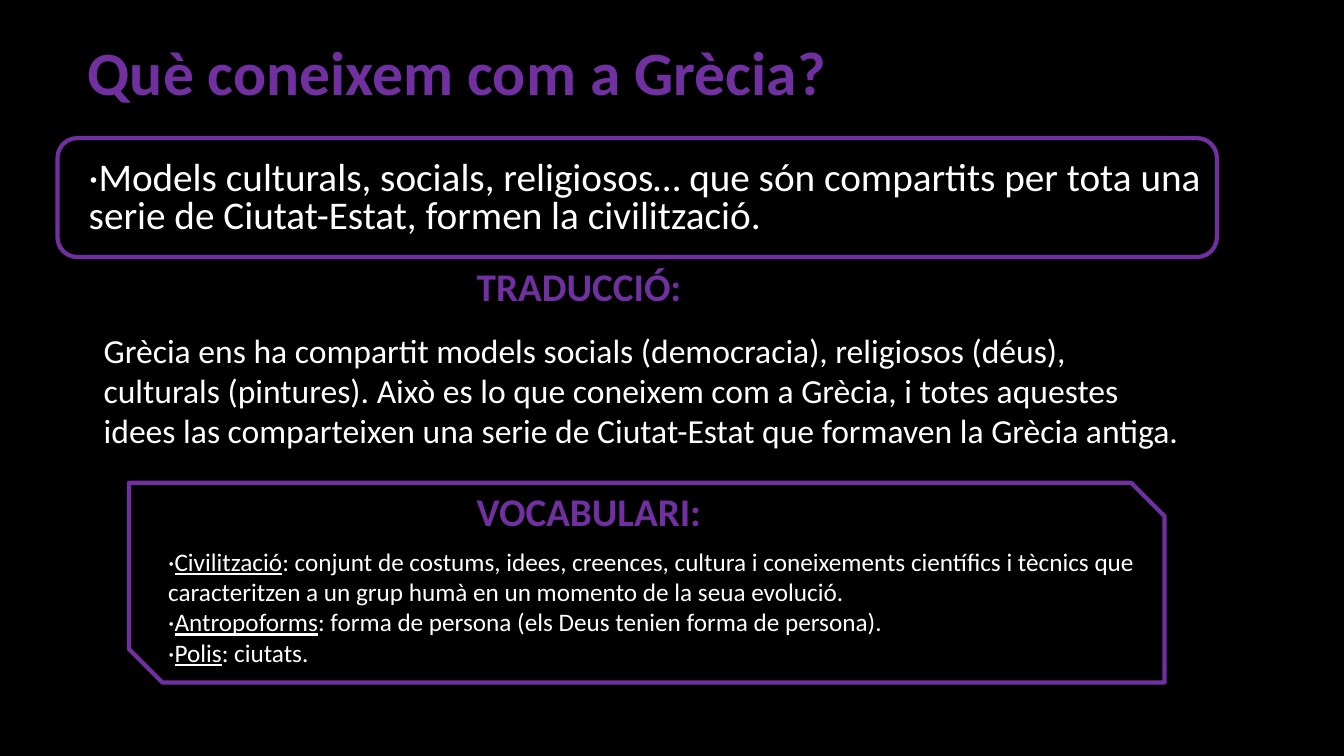
from dataclasses import dataclass

from lxml import etree
from pptx import Presentation
from pptx import util as u
from pptx.dml.color import RGBColor
from pptx.enum import shapes, text
from pptx.oxml import ns
from pptx.shapes.base import BaseShape
from pptx.slide import Slide
from pptx.text.text import TextFrame


@dataclass(frozen=True)
class Theme:
    font: str = "Calibri"
    background: RGBColor = RGBColor(0x00, 0x00, 0x00)
    accent: RGBColor = RGBColor(0x70, 0x30, 0xA0)
    ink: RGBColor = RGBColor(0xFF, 0xFF, 0xFF)
    title: int = 44
    heading: int = 28
    explanation: int = 24
    vocabulary: int = 18
    outline: int = 3


@dataclass(frozen=True)
class Area:
    left: float
    top: float
    width: float
    height: float


@dataclass(frozen=True)
class Passage:
    area: Area
    words: str
    size: int
    color: RGBColor
    bold: bool = False


@dataclass(frozen=True)
class Outline:
    area: Area
    kind: shapes.MSO_SHAPE


@dataclass(frozen=True)
class Entry:
    term: str
    meaning: str


THEME = Theme()

TITLE = Passage(Area(0.77, 0.22, 7.92, 1.06), "Què coneixem com a Grècia?",
                THEME.title, THEME.accent, True)
DEFINITION = Passage(
    Area(0.78, 1.55, 11.77, 0.91),
    "·Models culturals, socials, religiosos… que són compartits per tota una "
    "serie de Ciutat-Estat, formen la civilització.",
    THEME.heading, THEME.ink)
PASSAGES = [
    Passage(Area(4.63, 2.55, 3.82, 0.57), "TRADUCCIÓ:",
            THEME.heading, THEME.accent, True),
    Passage(Area(0.93, 3.22, 10.92, 1.31),
            "Grècia ens ha compartit models socials (democracia), religiosos "
            "(déus), culturals (pintures). Això es lo que coneixem com a Grècia, "
            "i totes aquestes idees las comparteixen una serie de Ciutat-Estat "
            "que formaven la Grècia antiga.",
            THEME.explanation, THEME.ink),
    Passage(Area(4.63, 4.79, 3.27, 0.57), "VOCABULARI:",
            THEME.heading, THEME.accent, True),
]
VOCABULARY_AREA = Area(1.57, 5.37, 10.27, 1.31)
VOCABULARY = [
    Entry("Civilització",
          ": conjunt de costums, idees, creences, cultura i coneixements "
          "científics i tècnics que caracteritzen a un grup humà en un momento "
          "de la seua evolució."),
    Entry("Antropoforms", ": forma de persona (els Deus tenien forma de persona)."),
    Entry("Polis", ": ciutats."),
]
OUTLINES = [
    Outline(Area(1.28, 4.79, 10.27, 1.98), shapes.MSO_SHAPE.SNIP_2_DIAG_RECTANGLE),
    Outline(Area(0.57, 1.37, 11.5, 1.18), shapes.MSO_SHAPE.ROUNDED_RECTANGLE),
]


def lengths(area: Area) -> tuple[u.Length, ...]:
    return tuple(u.Inches(side) for side in
                 (area.left, area.top, area.width, area.height))


def format_runs(frame: TextFrame, size: int, color: RGBColor, bold: bool) -> None:
    frame.word_wrap = True
    for para in frame.paragraphs:
        para.alignment = text.PP_ALIGN.LEFT
        for span in para.runs:
            span.font.name = THEME.font
            span.font.size = u.Pt(size)
            span.font.bold = bold
            span.font.color.rgb = color


def write_passage(box: BaseShape, passage: Passage) -> None:
    box.text_frame.text = passage.words
    format_runs(box.text_frame, passage.size, passage.color, passage.bold)


def fill_placeholder(box: BaseShape, passage: Passage, spacing: float) -> None:
    box.left, box.top, box.width, box.height = lengths(passage.area)
    write_passage(box, passage)
    box.text_frame.auto_size = text.MSO_AUTO_SIZE.NONE
    box.text_frame.paragraphs[0].line_spacing = spacing


def remove_bullet(box: BaseShape) -> None:
    para = box.text_frame.paragraphs[0]
    para.space_before = u.Pt(10)
    properties = para._p.get_or_add_pPr()
    properties.set("marL", "0")
    properties.set("indent", "0")
    etree.SubElement(properties, ns.qn("a:buNone"))


def add_vocabulary(page: Slide) -> None:
    frame = page.shapes.add_textbox(*lengths(VOCABULARY_AREA)).text_frame
    for index, entry in enumerate(VOCABULARY):
        para = frame.add_paragraph() if index else frame.paragraphs[0]
        for words in ("·", entry.term, entry.meaning):
            span = para.add_run()
            span.text = words
            span.font.underline = words == entry.term
    format_runs(frame, THEME.vocabulary, THEME.ink, False)


def add_outline(page: Slide, outline: Outline) -> None:
    shape = page.shapes.add_shape(outline.kind, *lengths(outline.area))
    shape.shadow.inherit = False
    shape.fill.background()
    shape.line.color.rgb = THEME.accent
    shape.line.width = u.Pt(THEME.outline)


def main() -> None:
    deck = Presentation()
    deck.slide_width, deck.slide_height = u.Inches(13.33), u.Inches(7.5)
    page = deck.slides.add_slide(deck.slide_layouts[1])
    page.background.fill.solid()
    page.background.fill.fore_color.rgb = THEME.background

    title, body = page.placeholders
    fill_placeholder(title, TITLE, 0.9)
    fill_placeholder(body, DEFINITION, 0.8)
    remove_bullet(body)
    for passage in PASSAGES:
        write_passage(page.shapes.add_textbox(*lengths(passage.area)), passage)
    add_vocabulary(page)
    for outline in OUTLINES:
        add_outline(page, outline)
    deck.save("out.pptx")


if __name__ == "__main__":
    main()
